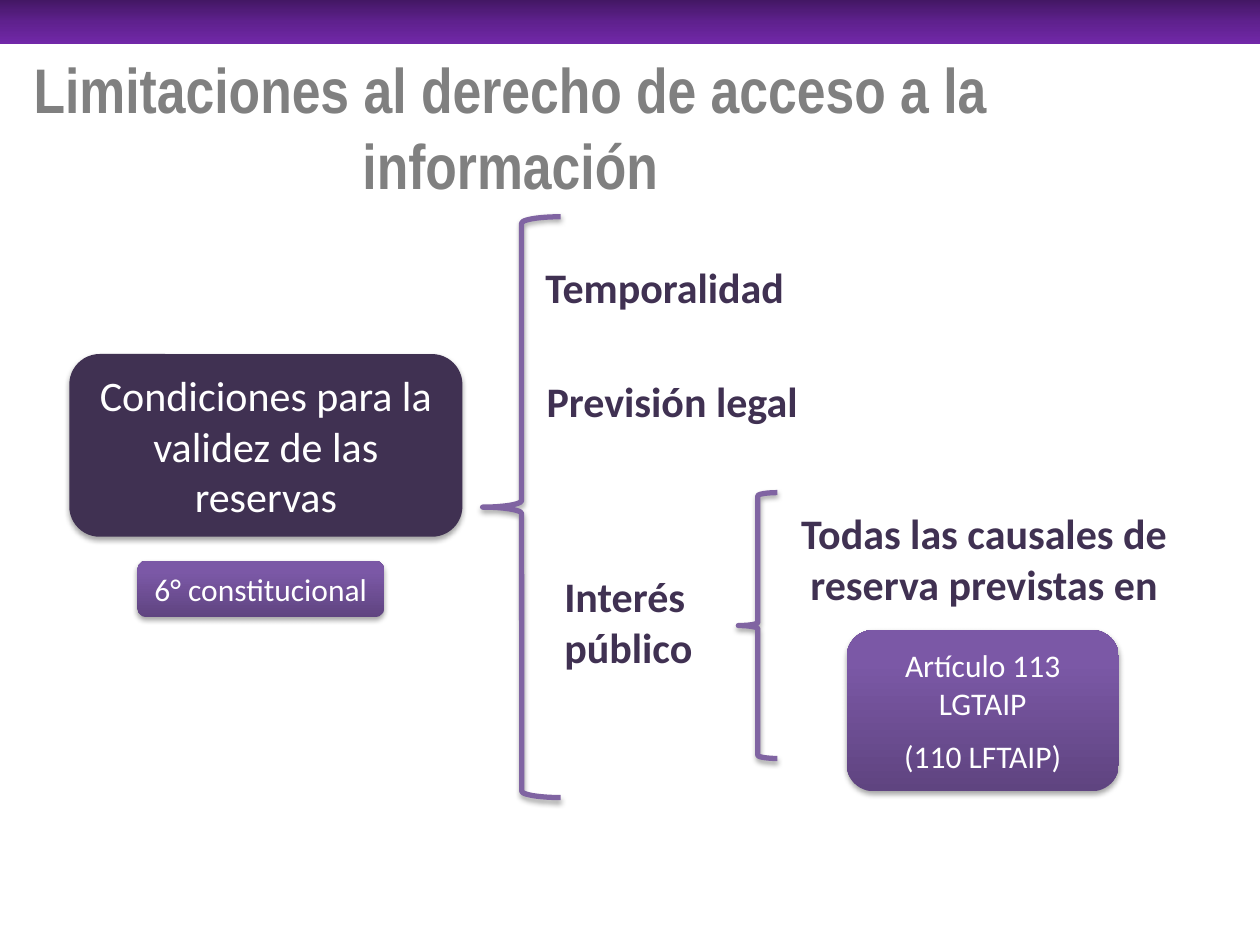
from lxml import etree
from pptx import Presentation
from pptx import util as u
from pptx.dml.color import RGBColor
from pptx.enum import shapes, text
from pptx.oxml.ns import nsdecls, qn

COLORS = {"title": "808080", "dark": "403152", "brace": "8064A2", "white": "FFFFFF", "shadow": "000000"}
BAND_GRADIENT = [(0, "431764"), (50, "5F218E"), (100, "7128A8")]
BOX_GRADIENT = [(0, "5F4480"), (80, "7B58A6"), (100, "7C57A8")]
DOWN, UP = 90, 270
LEFT, CENTER = text.PP_ALIGN.LEFT, text.PP_ALIGN.CENTER

TITLE = "Limitaciones al derecho de acceso a la información"
TITLE_AREA = (-0.45, 0.35, 9, 1.31)
BAND_AREA = (0, 0, 10.04, 0.35)
# area, paragraphs, size, gradient (None is solid dark), wrap
BOXES = [
    ((0.55, 2.81, 3.12, 1.45), ["Condiciones para la validez de las reservas"], 24, None, True),
    ((1.09, 4.45, 1.96, 0.45), ["6° constitucional"], 18, BOX_GRADIENT, False),
    ((6.72, 5, 2.16, 1.28), ["Artículo 113 LGTAIP", "(110 LFTAIP)"], 18, BOX_GRADIENT, True),
]
BRACES = [(3.83, 1.72, 0.62, 4.61), (5.86, 3.91, 0.31, 2.11)]
LABELS = [
    ((4.23, 2.03, 2.66, 0.5), "Temporalidad", LEFT),
    ((4.24, 2.93, 2.73, 0.51), "Previsión legal", LEFT),
    ((4.38, 4.48, 1.41, 0.91), "Interés público", LEFT),
    ((6.09, 3.98, 3.44, 0.91), "Todas las causales de reserva previstas en", CENTER),
]


def inches(area):
    return [u.Inches(value) for value in area]


def color(name):
    return RGBColor.from_string(COLORS[name])


def fill_gradient(shape, stops, angle):
    shape.fill.background()
    empty_fill = shape._element.spPr.find(qn("a:noFill"))
    stop_xml = "".join(
        f'<a:gs pos="{position * 1000}"><a:srgbClr val="{value}"/></a:gs>' for position, value in stops)
    gradient = etree.fromstring(
        f'<a:gradFill {nsdecls("a")} rotWithShape="1"><a:gsLst>{stop_xml}</a:gsLst>'
        f'<a:lin ang="{angle * 60000}" scaled="0"/></a:gradFill>')
    empty_fill.getparent().replace(empty_fill, gradient)


def add_shadow(shape):
    effects = shape._element.spPr.find(qn("a:effectLst"))
    effects.append(etree.fromstring(
        f'<a:outerShdw {nsdecls("a")} blurRad="{u.Pt(3.1)}" dist="{u.Pt(1.8)}" dir="5400000" rotWithShape="0">'
        f'<a:srgbClr val="{COLORS["shadow"]}"><a:alpha val="35000"/></a:srgbClr></a:outerShdw>'))


def add_plain_shape(slide, kind, area):
    shape = slide.shapes.add_shape(kind, *inches(area))
    shape.shadow.inherit = False
    shape.line.fill.background()
    return shape


def write(frame, paragraphs, size, color_name, align, font="Calibri", bold=False,
          anchor=text.MSO_ANCHOR.TOP, wrap=True):
    frame.auto_size = text.MSO_AUTO_SIZE.NONE
    frame.word_wrap = wrap
    frame.vertical_anchor = anchor
    for index, content in enumerate(paragraphs):
        paragraph = frame.add_paragraph() if index else frame.paragraphs[0]
        paragraph.alignment = align
        if index:
            paragraph.space_before = u.Pt(size / 2)
        run = paragraph.add_run()
        run.text = content
        run.font.name = font
        run.font.size = u.Pt(size)
        run.font.bold = bold
        run.font.color.rgb = color(color_name)


def add_box(slide, area, paragraphs, size, gradient, wrap):
    box = add_plain_shape(slide, shapes.MSO_SHAPE.ROUNDED_RECTANGLE, area)
    if gradient:
        fill_gradient(box, gradient, UP)
    else:
        box.fill.solid()
        box.fill.fore_color.rgb = color("dark")
    add_shadow(box)
    write(box.text_frame, paragraphs, size, "white", CENTER, anchor=text.MSO_ANCHOR.MIDDLE, wrap=wrap)


def add_brace(slide, area):
    brace = add_plain_shape(slide, shapes.MSO_SHAPE.LEFT_BRACE, area)
    brace.fill.background()
    brace.line.color.rgb = color("brace")
    brace.line.width = u.Pt(3)
    add_shadow(brace)


def main():
    presentation = Presentation()
    presentation.slide_width, presentation.slide_height = u.Inches(10), u.Inches(7.5)
    slide = presentation.slides.add_slide(presentation.slide_layouts.get_by_name("Title Only"))

    band = add_plain_shape(slide, shapes.MSO_SHAPE.RECTANGLE, BAND_AREA)
    fill_gradient(band, BAND_GRADIENT, DOWN)

    title = slide.shapes.title
    title.left, title.top, title.width, title.height = inches(TITLE_AREA)
    write(title.text_frame, [TITLE], 36, "title", CENTER, font="Arial Narrow", bold=True,
          anchor=text.MSO_ANCHOR.MIDDLE)

    for box in BOXES:
        add_box(slide, *box)
    for area in BRACES:
        add_brace(slide, area)
    for area, content, align in LABELS:
        label = slide.shapes.add_textbox(*inches(area))
        write(label.text_frame, [content], 24, "dark", align, bold=True)

    presentation.save("out.pptx")


if __name__ == "__main__":
    main()
